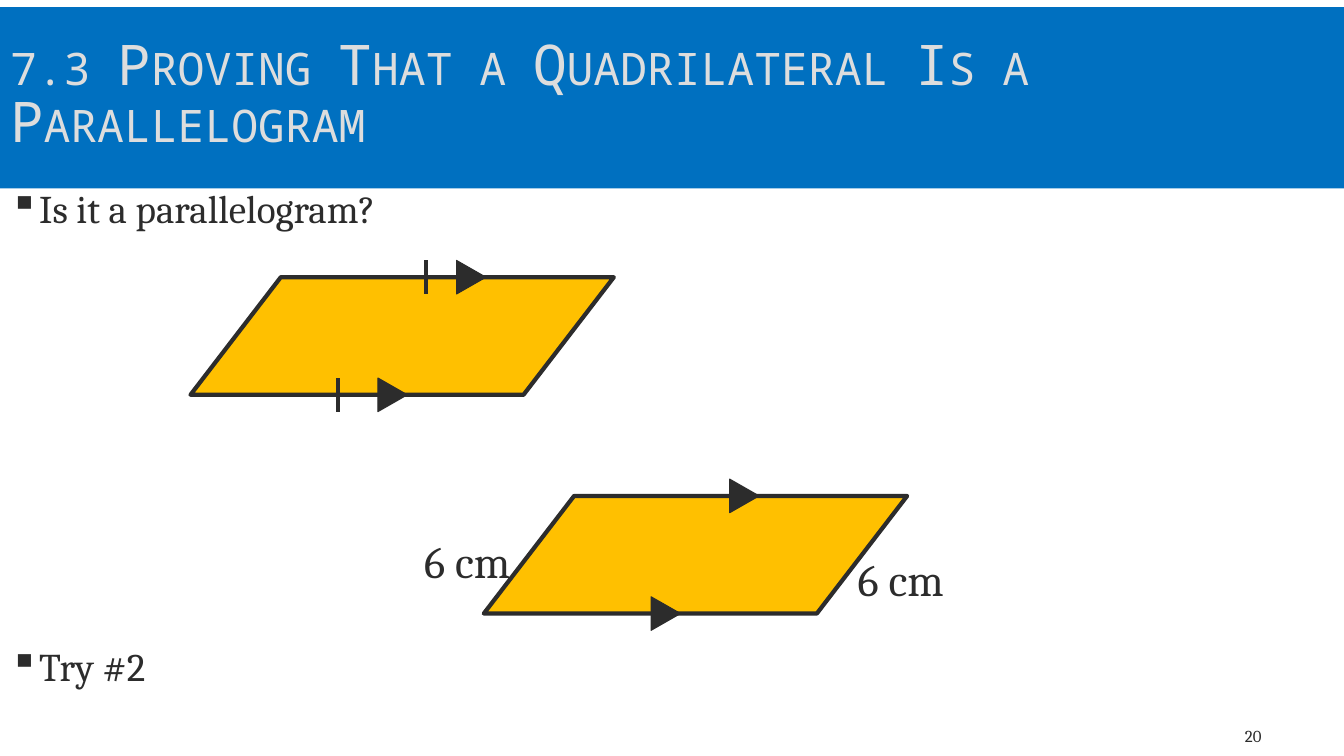
from dataclasses import dataclass

from lxml.etree import SubElement
from pptx import Presentation
from pptx.dml.color import RGBColor
from pptx.enum.shapes import MSO_CONNECTOR as Connector, MSO_SHAPE as Preset
from pptx.enum.text import MSO_ANCHOR as Anchor, MSO_AUTO_SIZE as AutoSize, PP_ALIGN as Align
from pptx.oxml.ns import qn
from pptx.shapes.autoshape import Shape
from pptx.shapes.group import GroupShape
from pptx.slide import Slide
from pptx.text.text import TextFrame, _Paragraph as Paragraph
from pptx.util import Inches, Length, Pt

# The grid: 160 columns by 90 rows of equal square cells
COLUMNS, ROWS = 160, 90
CELL = Inches(7.5) / ROWS


@dataclass(frozen=True)
class Theme:
    banner: RGBColor = RGBColor.from_string("0070C0")
    title: RGBColor = RGBColor.from_string("DDDDDD")
    ink: RGBColor = RGBColor.from_string("2C2C2C")
    figure: RGBColor = RGBColor.from_string("FFC000")
    title_font: str = "Noto Sans Mono"
    body_font: str = "Cambria"
    title_size: int = 40
    label_size: int = 32
    body_size: int = 28
    number_size: int = 12
    edge: float = 3
    hairline: float = 0.75


@dataclass(frozen=True)
class SideLabel:
    text: str
    column: float
    row: float


@dataclass(frozen=True)
class Figure:
    """A parallelogram; its marks are measured from its left top corner."""
    column: float
    row: float
    top_arrow: float
    bottom_arrow: float
    top_tick: float | None = None
    bottom_tick: float | None = None
    labels: tuple[SideLabel, ...] = ()


THEME = Theme()
FIGURE_WIDTH, FIGURE_HEIGHT, SLANT = 50.4, 14, 0.768
ARROW_WIDTH, ARROW_HEIGHT, TICK_HEIGHT = 4, 3.5, 4
LABEL_WIDTH, LABEL_HEIGHT = 16.4, 7.7

FIGURES = (
    Figure(22.68, 33, top_arrow=33.42, bottom_arrow=24.06, top_tick=28.08, bottom_tick=17.52),
    Figure(57.6, 59.04, top_arrow=31.02, bottom_arrow=21.66,
           labels=(SideLabel("6 cm", -8.28, 3.96), SideLabel("6 cm", 43.32, 6))),
)


def cells(count: float) -> Length:
    return Length(round(count * CELL))


def area(column: float, row: float, width: float, height: float) -> tuple[Length, ...]:
    return cells(column), cells(row), cells(width), cells(height)


def style(para: Paragraph, font: str, size: int, color: RGBColor) -> None:
    for span in para.runs:
        span.font.name = font
        span.font.size = Pt(size)
        span.font.color.rgb = color


def add_text(parent: Slide | GroupShape, text: str, place: tuple[Length, ...], size: int) -> TextFrame:
    frame = parent.shapes.add_textbox(*place).text_frame
    frame.word_wrap = True
    frame.text = text
    for para in frame.paragraphs:
        style(para, THEME.body_font, size, THEME.ink)
    return frame


def paint(shape: Shape, fill: RGBColor, line: RGBColor | None, width: float = 0) -> None:
    shape.shadow.inherit = False
    shape.fill.solid()
    shape.fill.fore_color.rgb = fill
    if line is None:
        shape.line.fill.background()
    else:
        shape.line.color.rgb = line
        shape.line.width = Pt(width)


def add_arrow(group: GroupShape, column: float, row: float) -> None:
    """A triangle pointing right, centred on an edge."""
    place = area(column - ARROW_WIDTH / 2, row - ARROW_HEIGHT / 2, ARROW_WIDTH, ARROW_HEIGHT)
    arrow = group.shapes.add_shape(Preset.ISOSCELES_TRIANGLE, *place)
    arrow.rotation = 90
    paint(arrow, THEME.ink, THEME.ink, THEME.hairline)


def add_tick(group: GroupShape, column: float, row: float) -> None:
    x, top, bottom = cells(column), cells(row - TICK_HEIGHT / 2), cells(row + TICK_HEIGHT / 2)
    tick = group.shapes.add_connector(Connector.STRAIGHT, x, top, x, bottom)
    tick.line.color.rgb = THEME.ink
    tick.line.width = Pt(THEME.edge)
    SubElement(tick._element.spPr, qn("a:effectLst"))


def add_figure(page: Slide, figure: Figure) -> None:
    group = page.shapes.add_group_shape()
    left, top = figure.column, figure.row
    body = group.shapes.add_shape(Preset.PARALLELOGRAM, *area(left, top, FIGURE_WIDTH, FIGURE_HEIGHT))
    body.adjustments[0] = SLANT
    paint(body, THEME.figure, THEME.ink, THEME.edge)

    edges = ((top, figure.top_tick, figure.top_arrow),
             (top + FIGURE_HEIGHT, figure.bottom_tick, figure.bottom_arrow))
    for row, tick, arrow in edges:
        if tick is not None:
            add_tick(group, left + tick, row)
        add_arrow(group, left + arrow, row)
    for label in figure.labels:
        place = area(left + label.column, top + label.row, LABEL_WIDTH, LABEL_HEIGHT)
        add_text(group, label.text, place, THEME.label_size)


def add_title(page: Slide, text: str) -> None:
    title = page.shapes.title
    title.left, title.top, title.width, title.height = area(0, 1.68, COLUMNS, 19.8)
    frame = title.text_frame
    frame.text = text
    frame.word_wrap = True
    frame.auto_size = AutoSize.NONE
    frame.vertical_anchor = Anchor.MIDDLE
    para = frame.paragraphs[0]
    para.alignment = Align.LEFT
    para.line_spacing = 0.85
    style(para, THEME.title_font, THEME.title_size, THEME.title)
    para.runs[0].font._element.set("cap", "small")

    # The banner lies behind the title
    banner = page.shapes.add_shape(Preset.RECTANGLE, *area(0, 0.84, COLUMNS, 21.6))
    paint(banner, THEME.banner, None)
    title._element.addprevious(banner._element)


def add_bullets(page: Slide, items: dict[str, float]) -> None:
    """Each item comes with the space before it, in points."""
    frame = add_text(page, "\n".join(items), area(0, 22.44, COLUMNS, 62.76), THEME.body_size)
    for para, space in zip(frame.paragraphs, items.values()):
        para.line_spacing = 0.8
        para.space_before = Pt(space)
        para.space_after = Pt(2)
        properties = para._p.get_or_add_pPr()
        properties.set("marL", str(Inches(0.2)))
        properties.set("indent", str(-Inches(0.2)))
        SubElement(properties, qn("a:buChar")).set("char", "▪")


def add_page_number(page: Slide, number: str) -> None:
    frame = add_text(page, number, area(147.6, 85.2, 12.4, 4.8), THEME.number_size)
    frame.vertical_anchor = Anchor.MIDDLE
    frame.margin_left = Inches(0.05)


def main() -> None:
    deck = Presentation()
    deck.slide_width, deck.slide_height = cells(COLUMNS), cells(ROWS)
    page = deck.slides.add_slide(deck.slide_layouts.get_by_name("Title Only"))

    add_title(page, "7.3 Proving That a Quadrilateral Is a Parallelogram")
    add_bullets(page, {"Is it a parallelogram?": 12, "Try #2": 298})
    for figure in FIGURES:
        add_figure(page, figure)
    add_page_number(page, "20")
    deck.save("out.pptx")


if __name__ == "__main__":
    main()
